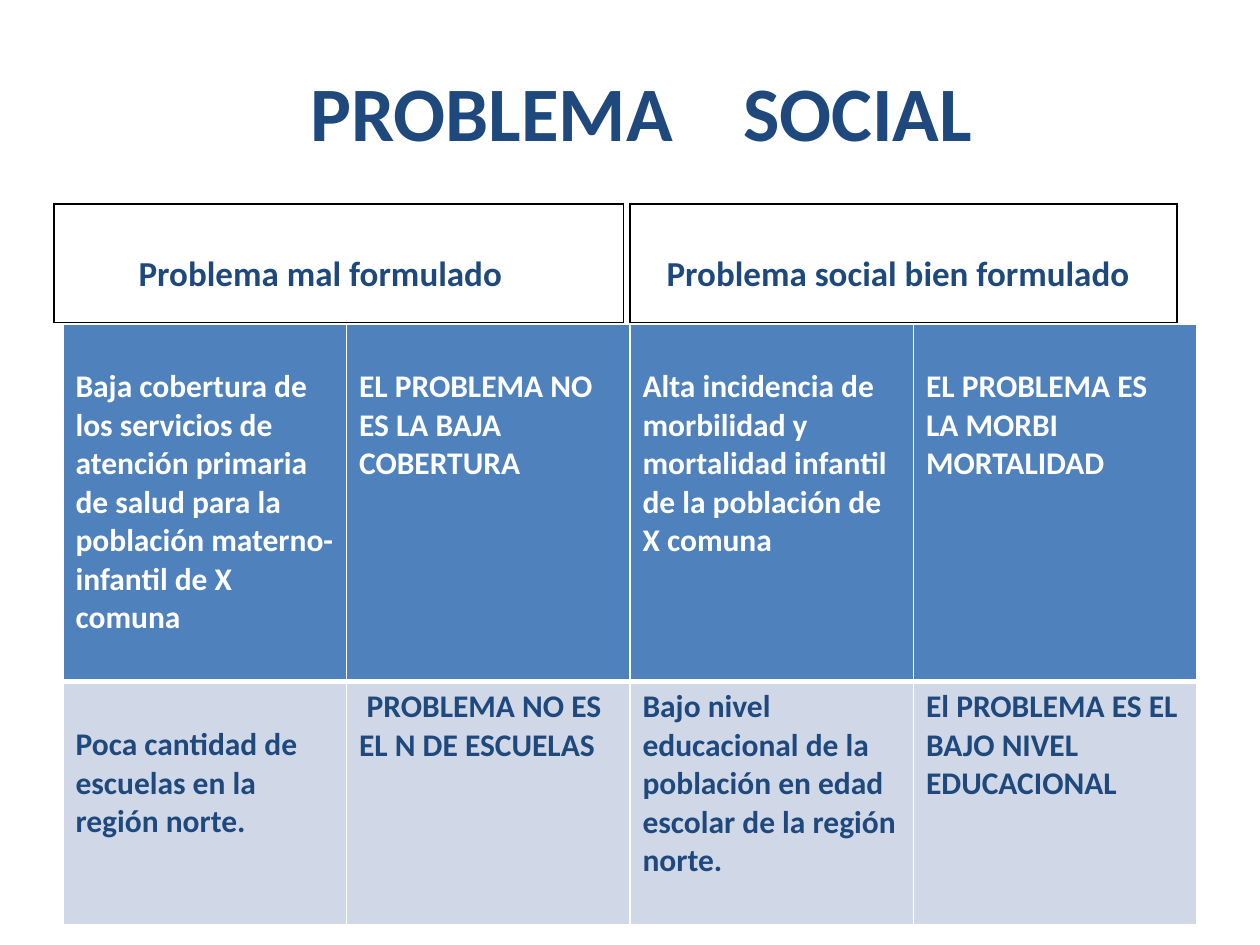
"""Build a slide comparing badly and well formulated social problems."""
import pptx
import pptx.dml.color
import pptx.enum.text
import pptx.oxml
import pptx.oxml.ns
import pptx.util

COLORS = {"navy": "1F497D", "blue": "4F81BD", "pale": "D0D8E8",
          "white": "FFFFFF", "black": "000000"}
INCH = pptx.util.Inches(1)
LINE = 0.3
PAD = 0.05


def write(frame, text, size=18, color="navy", align=None, indent=0, gap=0):
    for index, line in enumerate(text.split("\n")):
        paragraph = frame.paragraphs[0] if index == 0 else frame.add_paragraph()
        paragraph.alignment = align
        if indent:
            paragraph._p.get_or_add_pPr().set("indent", str(int(indent * INCH)))
        pieces = line.partition(" ") if gap else [line]
        for piece in pieces:
            run = paragraph.add_run()
            run.text = piece
            run.font.name = "Calibri"
            run.font.size = pptx.util.Pt(size)
            run.font.bold = True
            run.font.color.rgb = pptx.dml.color.RGBColor.from_string(COLORS[color])
            if piece == " ":
                run._r.get_or_add_rPr().set("spc", str(gap * 100))


def add_grid(left, top, widths, heights, border, thick=1):
    grid = slide.shapes.add_table(
        len(heights), len(widths), int(left * INCH), int(top * INCH),
        int(sum(widths) * INCH), int(sum(heights) * INCH)).table
    grid.first_row = grid.horz_banding = False
    for column, width in zip(grid.columns, widths):
        column.width = int(width * INCH)
    for r, height in enumerate(heights):
        grid.rows[r].height = int(height * INCH)
        for cell in grid.rows[r].cells:
            properties = cell._tc.get_or_add_tcPr()
            for side in "LRTB":
                inner = (side == "B" and r < len(heights) - 1) or (side == "T" and r > 0)
                weight = pptx.util.Pt(thick if inner else 1)
                properties.append(pptx.oxml.parse_xml(
                    f'<a:ln{side} {pptx.oxml.ns.nsdecls("a")} w="{weight}"><a:solidFill>'
                    f'<a:srgbClr val="{COLORS[border]}"/></a:solidFill></a:ln{side}>'))
            cell.fill.background()
    return grid


presentation = pptx.Presentation()
presentation.slide_width = 10 * INCH
presentation.slide_height = int(7.5 * INCH)
slide = presentation.slides.add_slide(presentation.slide_layouts[5])

title = slide.shapes.title
title.left, title.top = int(0.59 * INCH), int(0.29 * INCH)
title.width, title.height = 9 * INCH, int(1.17 * INCH)
title.text_frame.vertical_anchor = pptx.enum.text.MSO_ANCHOR.MIDDLE
write(title.text_frame, "PROBLEMA SOCIAL", size=44, gap=30,
      align=pptx.enum.text.PP_ALIGN.CENTER)

examples = [
    ("blue", "white", [
        ("Baja cobertura de los servicios de atención primaria de salud para la "
         "población materno-infantil de X comuna", 1, 0),
        ("EL PROBLEMA NO ES LA BAJA COBERTURA", 1, 0),
        ("Alta incidencia de morbilidad y mortalidad infantil de la población de X comuna", 1, 0),
        ("EL PROBLEMA ES LA MORBI\nMORTALIDAD", 1, 0)]),
    ("pale", "navy", [
        ("Poca cantidad de escuelas en la región norte.", 1, 0),
        ("PROBLEMA NO ES EL N DE ESCUELAS", 0, 0.06),
        ("Bajo nivel educacional de la población en edad escolar de la región norte.", 0, 0),
        ("El PROBLEMA ES EL BAJO NIVEL EDUCACIONAL", 0, 0)]),
]
comparison = add_grid(0.5, 2.57, [2.25] * 4, [2.84, 1.93], "white", thick=3)
for row, (fill, color, entries) in zip(comparison.rows, examples):
    for cell, (text, lines_down, indent) in zip(row.cells, entries):
        cell.fill.solid()
        cell.fill.fore_color.rgb = pptx.dml.color.RGBColor.from_string(COLORS[fill])
        cell.margin_top = int((PAD + lines_down * LINE) * INCH)
        write(cell.text_frame, text, color=color, indent=indent)

headings = [(0.43, 4.52, 0.67, "Problema mal formulado"),
            (5, 4.34, 0.29, "Problema social bien formulado")]
for left, width, margin, text in headings:
    heading = add_grid(left, 1.62, [width], [0.94], "black").cell(0, 0)
    heading.margin_left = int(margin * INCH)
    heading.margin_top = int(0.39 * INCH)
    write(heading.text_frame, text, size=20)

presentation.save("out.pptx")
